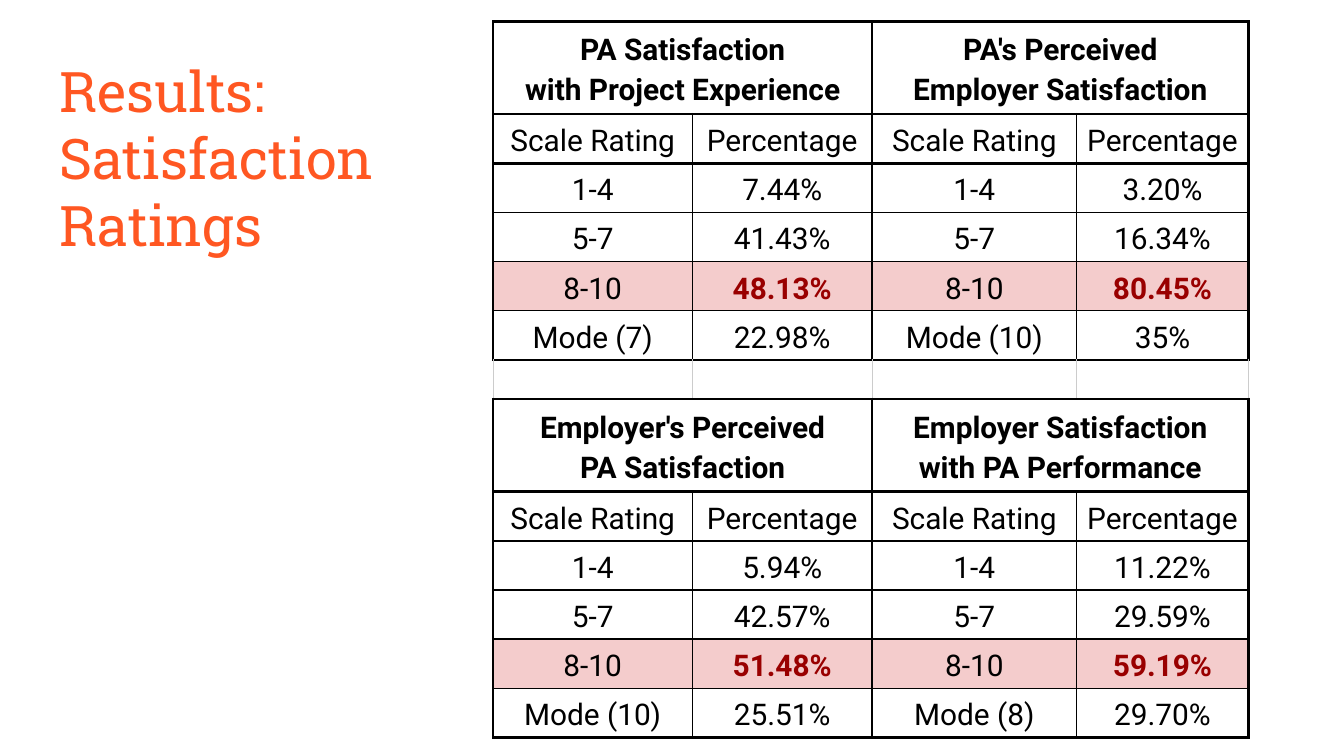
from lxml import etree
from pptx import Presentation
from pptx.dml.color import RGBColor
from pptx.enum.text import MSO_ANCHOR, MSO_AUTO_SIZE, PP_ALIGN
from pptx.oxml.ns import qn
from pptx.util import Inches, Pt

LEFT, CENTER = PP_ALIGN.LEFT, PP_ALIGN.CENTER
TOP, MIDDLE = MSO_ANCHOR.TOP, MSO_ANCHOR.MIDDLE
NO_AUTOFIT = MSO_AUTO_SIZE.NONE
TITLE_ONLY = 5

COLORS = {
    "title": "FF5722",
    "text": "000000",
    "grid": "000000",
    "gap grid": "CCCCCC",
    "highlight": "F4CCCC",
    "emphasis": "990000",
}
THICK, THIN = 1.5, 0.75

LABELS = ["Scale Rating", "Percentage"] * 2
RATINGS = [
    ["PA Satisfaction\nwith Project Experience", "", "PA's Perceived\nEmployer Satisfaction", ""],
    LABELS,
    ["1-4", "7.44%", "1-4", "3.20%"],
    ["5-7", "41.43%", "5-7", "16.34%"],
    ["8-10", "48.13%", "8-10", "80.45%"],
    ["Mode (7)", "22.98%", "Mode (10)", "35%"],
    [""] * 4,
    ["Employer's Perceived\nPA Satisfaction", "", "Employer Satisfaction\nwith PA Performance", ""],
    LABELS,
    ["1-4", "5.94%", "1-4", "11.22%"],
    ["5-7", "42.57%", "5-7", "29.59%"],
    ["8-10", "51.48%", "8-10", "59.19%"],
    ["Mode (10)", "25.51%", "Mode (8)", "29.70%"],
]
HEADER_ROWS, HIGHLIGHT_ROWS, GAP_ROW = (0, 7), (4, 11), 6
THIN_RULES = (3, 4, 5, 10, 11, 12)  # row edges drawn thin, counted from the top
COLUMN_WIDTHS = [1.48, 1.34, 1.52, 1.28]
HEADER_HEIGHT, GAP_HEIGHT = 0.69, 0.29
ROW_HEIGHT = 1.83 / 5  # five equal rows under each header


def add_border(cell, side, color, width):
    """Draw one cell edge; side is L, R, T or B, and the calls must come in that order."""
    line = etree.SubElement(cell._tc.get_or_add_tcPr(), qn("a:ln" + side), w=str(Pt(width)))
    fill = etree.SubElement(line, qn("a:solidFill"))
    etree.SubElement(fill, qn("a:srgbClr"), val=color)


prs = Presentation()
prs.slide_width, prs.slide_height = Inches(10), Inches(10 * 9 / 16)
slide = prs.slides.add_slide(prs.slide_layouts[TITLE_ONLY])

title = slide.shapes.title
title.left, title.top = Inches(0.34), Inches(0.32)
title.width, title.height = Inches(3.79), Inches(2.86)
frame = title.text_frame
frame.text = "Results: Satisfaction Ratings"
frame.word_wrap = True
frame.auto_size = NO_AUTOFIT
frame.vertical_anchor = TOP
frame.margin_left = frame.margin_right = Inches(0.1)
frame.margin_top = frame.margin_bottom = Inches(0.1)
heading = frame.paragraphs[0]
heading.alignment = LEFT
heading.line_spacing = 1.0
heading.font.name, heading.font.size = "Roboto Slab", Pt(30)
heading.font.color.rgb = RGBColor.from_string(COLORS["title"])

heights = [
    HEADER_HEIGHT if row in HEADER_ROWS else GAP_HEIGHT if row == GAP_ROW else ROW_HEIGHT
    for row in range(len(RATINGS))
]
table = slide.shapes.add_table(
    len(RATINGS), len(COLUMN_WIDTHS), Inches(3.67), Inches(0.16),
    Inches(sum(COLUMN_WIDTHS)), Inches(sum(heights)),
).table
table.first_row = table.horz_banding = False
for column, width in zip(table.columns, COLUMN_WIDTHS):
    column.width = Inches(width)
for table_row, height in zip(table.rows, heights):
    table_row.height = Inches(height)
for row in HEADER_ROWS:
    for col in (0, 2):
        table.cell(row, col).merge(table.cell(row, col + 1))

for row, entries in enumerate(RATINGS):
    is_header, is_highlight, is_gap = row in HEADER_ROWS, row in HIGHLIGHT_ROWS, row == GAP_ROW
    for col, entry in enumerate(entries):
        cell = table.cell(row, col)
        is_percentage = col % 2 == 1

        for side, edge in (("L", col), ("R", col + 1)):
            width = THICK if not is_gap and (is_header or edge % 2 == 0) else THIN
            add_border(cell, side, COLORS["gap grid" if is_gap else "grid"], width)
        for side, edge in (("T", row), ("B", row + 1)):
            add_border(cell, side, COLORS["grid"], THIN if edge in THIN_RULES else THICK)

        if is_highlight:
            cell.fill.solid()
            cell.fill.fore_color.rgb = RGBColor.from_string(COLORS["highlight"])
        else:
            cell.fill.background()

        cell.vertical_anchor = MIDDLE
        cell.margin_left = cell.margin_right = Inches(0.03)
        cell.margin_top = cell.margin_bottom = Inches(0.02)
        cell.text = entry
        emphasized = is_highlight and is_percentage
        for paragraph in cell.text_frame.paragraphs:
            paragraph.alignment = CENTER
            paragraph.line_spacing = 1.15
            paragraph.font.name = "Roboto"
            paragraph.font.size = Pt(10 if is_gap else 16)
            paragraph.font.bold = is_header or emphasized
            paragraph.font.color.rgb = RGBColor.from_string(
                COLORS["emphasis" if emphasized else "text"])

prs.save("out.pptx")
